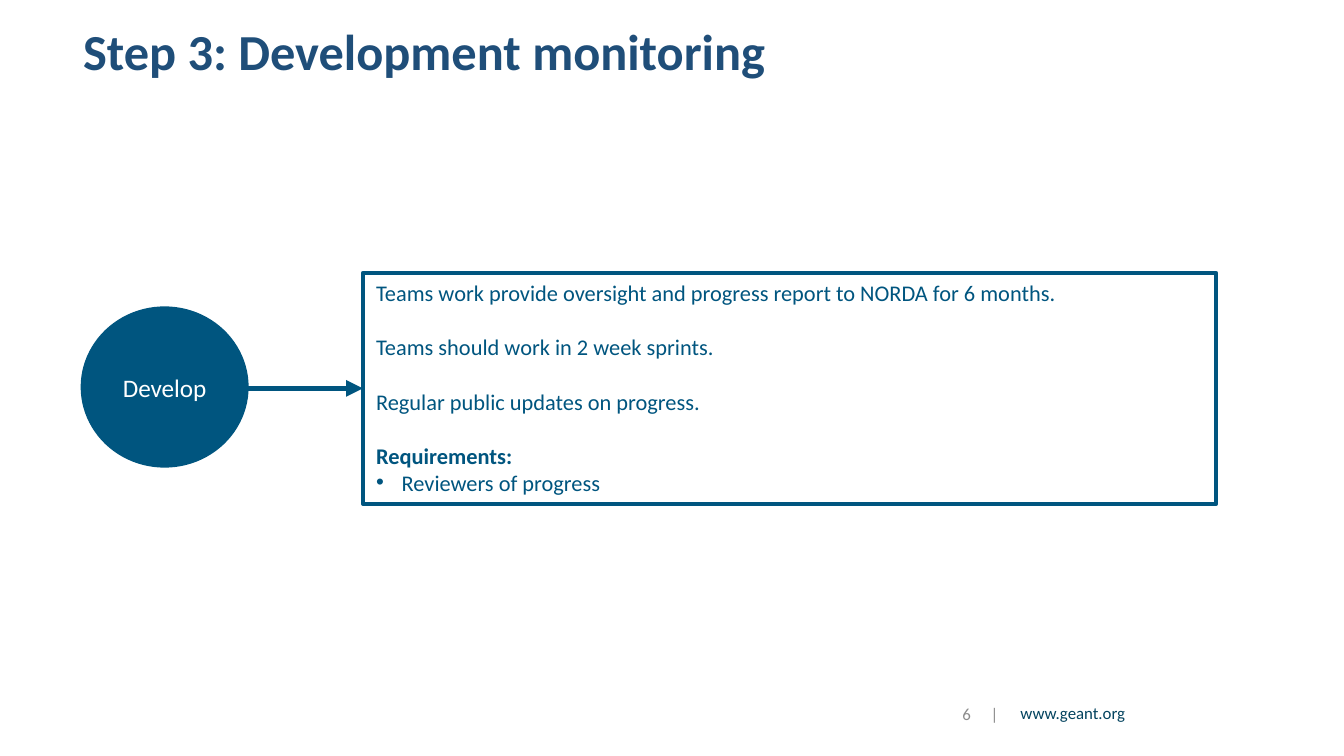
import pptx
import pptx.util
import pptx.dml.color
import pptx.enum.shapes
import pptx.enum.text
import pptx.oxml.ns
import lxml.etree

Inches = pptx.util.Inches
Pt = pptx.util.Pt
RGBColor = pptx.dml.color.RGBColor
MSO_ANCHOR = pptx.enum.text.MSO_ANCHOR
PP_ALIGN = pptx.enum.text.PP_ALIGN
MSO_SHAPE = pptx.enum.shapes.MSO_SHAPE
qn = pptx.oxml.ns.qn

BLUE = RGBColor(0x00, 0x55, 0x7F)
TITLE_BLUE = RGBColor(0x1F, 0x4E, 0x79)
LINK_BLUE = RGBColor(0x03, 0x43, 0x5F)
GREY = RGBColor(0x8C, 0x8C, 0x8C)
WHITE = RGBColor(0xFF, 0xFF, 0xFF)


def add_run(paragraph, text, size, color, bold=False):
    run = paragraph.add_run()
    run.text = text
    run.font.name = "Calibri"
    run.font.size = Pt(size)
    run.font.bold = bold
    run.font.color.rgb = color


def add_text_box(left, top, width, height, anchor):
    text_box = slide.shapes.add_textbox(Inches(left), Inches(top), Inches(width), Inches(height))
    text_box.text_frame.word_wrap = True
    text_box.text_frame.vertical_anchor = anchor
    return text_box.text_frame


# Widescreen slide, 16 to 9
presentation = pptx.Presentation()
presentation.slide_width = Inches(10)
presentation.slide_height = Inches(10) * 9 // 16
slide = presentation.slides.add_slide(presentation.slide_layouts[6])

# Title
title = add_text_box(0.52, 0.23, 8.12, 0.35, MSO_ANCHOR.MIDDLE).paragraphs[0]
title.line_spacing = 0.9
add_run(title, "Step 3: Development monitoring", 27, TITLE_BLUE, True)

# Footer: address, then page number and divider set apart by a tab
address = add_text_box(7.21, 5.18, 1.26, 0.27, MSO_ANCHOR.TOP).paragraphs[0]
address.alignment = PP_ALIGN.RIGHT
add_run(address, "www.geant.org", 9, LINK_BLUE)

page_frame = add_text_box(6.97, 5.18, 0.55, 0.27, MSO_ANCHOR.MIDDLE)
page_frame.margin_left = Inches(0.19)
page_frame.margin_right = 0
page_number = page_frame.paragraphs[0]
tabs = lxml.etree.SubElement(page_number._p.get_or_add_pPr(), qn("a:tabLst"))
lxml.etree.SubElement(tabs, qn("a:tab"), pos=str(Inches(0.21)), algn="l")
add_run(page_number, "6\t|", 9, GREY)

# Step circle
circle = slide.shapes.add_shape(
    MSO_SHAPE.OVAL, Inches(0.6), Inches(2.28), Inches(1.25), Inches(1.2))
circle.shadow.inherit = False
circle.fill.solid()
circle.fill.fore_color.rgb = BLUE
circle.line.fill.background()
circle.text_frame.word_wrap = False
circle.text_frame.vertical_anchor = MSO_ANCHOR.MIDDLE
step = circle.text_frame.paragraphs[0]
step.alignment = PP_ALIGN.CENTER
add_run(step, "Develop", 13.5, WHITE)

# Details box
details = slide.shapes.add_shape(
    MSO_SHAPE.RECTANGLE, Inches(2.7), Inches(2.03), Inches(6.35), Inches(1.72))
details.shadow.inherit = False
details.fill.background()
details.line.color.rgb = BLUE
details.line.width = Pt(2)
details_frame = details.text_frame
details_frame.word_wrap = True
details_frame.vertical_anchor = MSO_ANCHOR.TOP

statements = [
    "Teams work provide oversight and progress report to NORDA for 6 months.",
    "Teams should work in 2 week sprints.",
    "Regular public updates on progress.",
    "Requirements:",
]
for index, statement in enumerate(statements):
    paragraph = details_frame.add_paragraph() if index else details_frame.paragraphs[0]
    paragraph.alignment = PP_ALIGN.LEFT
    if index:
        paragraph.space_before = Pt(14.6)
    add_run(paragraph, statement, 12, BLUE, statement == "Requirements:")

requirement = details_frame.add_paragraph()
requirement.alignment = PP_ALIGN.LEFT
properties = requirement._p.get_or_add_pPr()
properties.set("marL", str(Inches(0.19)))
properties.set("indent", str(Inches(-0.19)))
lxml.etree.SubElement(properties, qn("a:buFont"), typeface="Arial")
lxml.etree.SubElement(properties, qn("a:buChar"), char="•")
add_run(requirement, "Reviewers of progress", 12, BLUE)

# Level arrow from the circle to the middle of the details box
arrow_y = details.top + details.height // 2
arrow = slide.shapes.add_connector(
    pptx.enum.shapes.MSO_CONNECTOR.STRAIGHT,
    Inches(1.84), arrow_y, details.left, arrow_y)
arrow.end_connect(details, 1)
arrow.line.color.rgb = BLUE
arrow.line.width = Pt(3)
lxml.etree.SubElement(arrow.line._get_or_add_ln(), qn("a:tailEnd"), type="triangle")
lxml.etree.SubElement(arrow._element.spPr, qn("a:effectLst"))

presentation.save("out.pptx")
